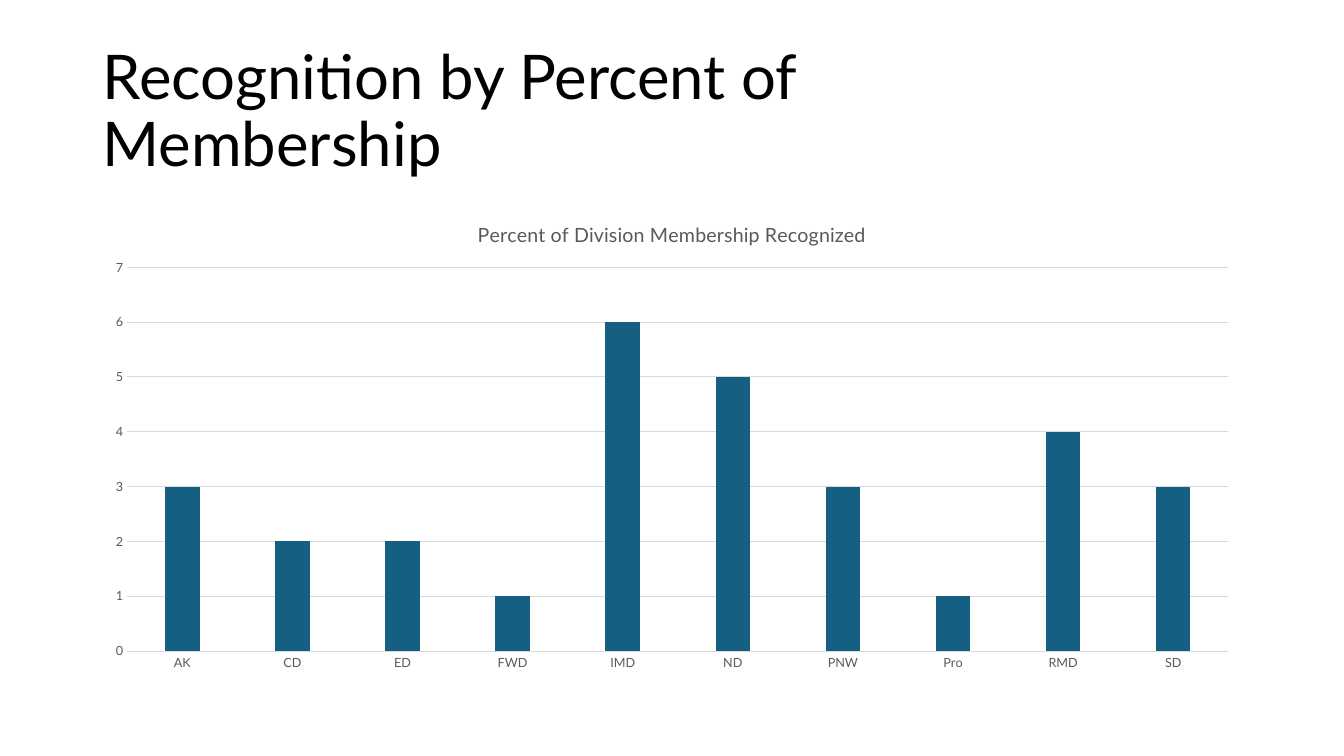
from lxml import etree
from pptx import Presentation
from pptx import util as u
from pptx.chart.data import CategoryChartData
from pptx.dml.color import RGBColor
from pptx.enum import chart as charts, text
from pptx.oxml import ns

FONT = "Lato"
GREY = "595959"
RULE = "D9D9D9"
RECOGNIZED = {"AK": 3, "CD": 2, "ED": 2, "FWD": 1, "IMD": 6,
              "ND": 5, "PNW": 3, "Pro": 1, "RMD": 4, "SD": 3}


def colour(value):
    """Turn a hex string into a colour."""
    return RGBColor.from_string(value)


def format_font(font, size, fill):
    """Set the face, size and colour of a font."""
    font.name = FONT
    font.size = u.Pt(size)
    font.bold = False
    font.color.rgb = colour(fill)


def write_text(frame, words, size=14, fill=GREY, spacing=None):
    """Write one formatted paragraph into a text frame."""
    frame.text = words
    paragraph = frame.paragraphs[0]
    paragraph.line_spacing = spacing
    format_font(paragraph.runs[0].font, size, fill)


def add_title(slide, words):
    """Place and fill the title placeholder."""
    title = slide.shapes.title
    title.left, title.top = u.Cm(2.33), u.Cm(1.01)
    title.width, title.height = u.Cm(25.98), u.Cm(3.68)
    frame = title.text_frame
    write_text(frame, words, size=44, fill="000000", spacing=0.9)
    frame.word_wrap = True
    frame.auto_size = text.MSO_AUTO_SIZE.NONE
    frame.vertical_anchor = text.MSO_ANCHOR.MIDDLE
    frame.paragraphs[0].alignment = text.PP_ALIGN.LEFT


def format_line(line):
    """Give a chart line the thin grey rule style."""
    line.color.rgb = colour(RULE)
    line.width = u.Pt(0.75)


def format_axis(axis):
    """Remove tick marks and set the label font of an axis."""
    axis.major_tick_mark = charts.XL_TICK_MARK.NONE
    axis.minor_tick_mark = charts.XL_TICK_MARK.NONE
    format_font(axis.tick_labels.font, 9, GREY)


def set_plot_area(chart, **place):
    """Fix the inner plot area as fractions of the chart."""
    area = chart.plots[0]._element.getparent()
    layout = area.find(ns.qn("c:layout"))
    if layout is None:
        layout = etree.Element(ns.qn("c:layout"))
        area.insert(0, layout)
    manual = etree.SubElement(layout, ns.qn("c:manualLayout"))
    settings = {"layoutTarget": "inner", "xMode": "edge", "yMode": "edge", **place}
    for tag, value in settings.items():
        etree.SubElement(manual, ns.qn(f"c:{tag}"), val=str(value))


def add_column_chart(slide, heading, values):
    """Add the column chart of recognition by division."""
    data = CategoryChartData()
    data.categories = list(values)
    data.add_series("Series 1", list(values.values()))
    chart = slide.shapes.add_chart(
        charts.XL_CHART_TYPE.COLUMN_CLUSTERED,
        u.Cm(2.33), u.Cm(5.08), u.Cm(29.21), u.Cm(12.09), data).chart
    format_font(chart.font, 10, "000000")
    chart.has_legend = False
    chart.has_title = True
    write_text(chart.chart_title.text_frame, heading)
    chart.chart_title.include_in_layout = False

    plot = chart.plots[0]
    plot.gap_width, plot.overlap = 219, -27
    plot.vary_by_categories = False
    bars = plot.series[0].format.fill
    bars.solid()
    bars.fore_color.rgb = colour("156082")

    format_axis(chart.category_axis)
    format_line(chart.category_axis.format.line)
    value_axis = chart.value_axis
    format_axis(value_axis)
    value_axis.format.line.fill.background()
    value_axis.minimum_scale, value_axis.maximum_scale = 0, 7
    value_axis.major_unit = 1
    value_axis.has_major_gridlines = True
    format_line(value_axis.major_gridlines.format.line)
    set_plot_area(chart, x=0.03, y=0.137, w=0.95, h=0.8)


def main():
    """Build and save the slide."""
    presentation = Presentation()
    presentation.slide_width, presentation.slide_height = u.Cm(33.87), u.Cm(19.05)
    slide = presentation.slides.add_slide(presentation.slide_layouts[5])
    add_title(slide, "Recognition by Percent of Membership")
    add_column_chart(slide, "Percent of Division Membership Recognized", RECOGNIZED)
    presentation.save("out.pptx")


if __name__ == "__main__":
    main()
